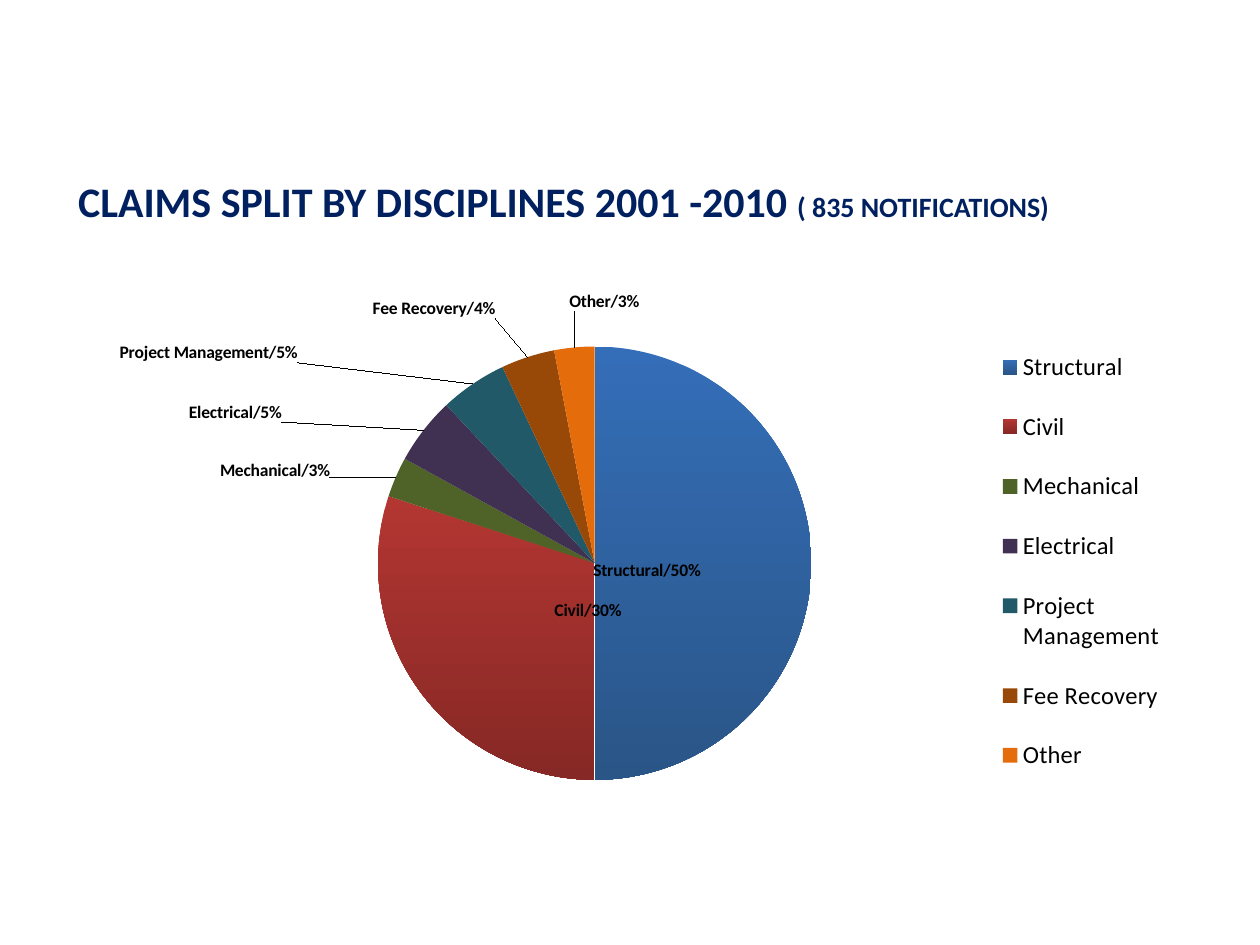
from dataclasses import dataclass
from typing import Any, Optional

import pptx
import pptx.chart.data
import pptx.dml.color
import pptx.enum.chart
import pptx.enum.text
import pptx.oxml
import pptx.oxml.ns
import pptx.util

Inches = pptx.util.Inches


@dataclass(frozen=True)
class Theme:
    font: str = "Calibri"
    title_color: str = "002060"
    text_color: str = "000000"
    title_size: int = 24
    subtitle_size: int = 16
    legend_size: int = 14
    label_size: int = 10


@dataclass(frozen=True)
class Box:
    left: float
    top: float
    width: float
    height: float


@dataclass(frozen=True)
class Discipline:
    name: str
    share: float
    colors: tuple[str, ...]
    label_shift: tuple[float, float]


THEME = Theme()
TITLE_BOX = Box(0.52, 1.33, 9.16, 0.52)
CHART_BOX = Box(0.5, 2.19, 9, 4.51)
PLOT_BOX = Box(0, 0.56, 8.44, 3.44)
LEGEND_BOX = Box(7.33, 0.37, 1.5, 3.79)
DISCIPLINES = (
    Discipline("Structural", 0.5, ("346EB8", "2A5587"), (-1.79, 0.06)),
    Discipline("Civil", 0.3, ("B33632", "862825"), (1.65, -0.75)),
    Discipline("Mechanical", 0.03, ("4F6228",), (-0.47, 0.05)),
    Discipline("Electrical", 0.05, ("403152",), (-1.08, -0.03)),
    Discipline("Project Management", 0.05, ("215968",), (-1.36, -0.12)),
    Discipline("Fee Recovery", 0.04, ("984807",), (-0.24, -0.25)),
    Discipline("Other", 0.03, ("E46C0A",), (0.52, -0.23)),
)


def rgb(color: str) -> pptx.dml.color.RGBColor:
    return pptx.dml.color.RGBColor.from_string(color)


def format_font(font: Any, size: int, color: str, bold: bool = False) -> None:
    font.name = THEME.font
    font.size = pptx.util.Pt(size)
    font.bold = bold
    font.color.rgb = rgb(color)


def add_text(paragraph: Any, text: str, *, size: int, color: str, bold: bool = False) -> None:
    run = paragraph.add_run()
    run.text = text
    format_font(run.font, size, color, bold)


def chart_element(tag: str, content: str = "", attributes: str = "") -> Any:
    namespace = pptx.oxml.ns.nsdecls("c")
    return pptx.oxml.parse_xml(f"<c:{tag} {namespace} {attributes}>{content}</c:{tag}>")


def manual_layout(left: float, top: float, width: Optional[float] = None,
                  height: Optional[float] = None, inner: bool = False) -> Any:
    content = '<c:layoutTarget val="inner"/>' if inner else ""
    if width is not None:
        content += '<c:xMode val="edge"/><c:yMode val="edge"/>'
    lengths = (("x", left, CHART_BOX.width), ("y", top, CHART_BOX.height),
               ("w", width, CHART_BOX.width), ("h", height, CHART_BOX.height))
    for tag, length, full in lengths:
        if length is not None:
            content += f'<c:{tag} val="{length / full:.4f}"/>'
    return chart_element("layout", f"<c:manualLayout>{content}</c:manualLayout>")


def add_title(slide: Any) -> None:
    title = slide.shapes.title
    title.left, title.top = Inches(TITLE_BOX.left), Inches(TITLE_BOX.top)
    title.width, title.height = Inches(TITLE_BOX.width), Inches(TITLE_BOX.height)
    title.text_frame.word_wrap = True
    title.text_frame.vertical_anchor = pptx.enum.text.MSO_ANCHOR.MIDDLE
    paragraph = title.text_frame.paragraphs[0]
    paragraph.alignment = pptx.enum.text.PP_ALIGN.LEFT
    add_text(paragraph, "CLAIMS SPLIT BY DISCIPLINES 2001 -2010 ",
             size=THEME.title_size, color=THEME.title_color, bold=True)
    add_text(paragraph, "( 835 NOTIFICATIONS)",
             size=THEME.subtitle_size, color=THEME.title_color, bold=True)


def fill_slice(fill: Any, colors: tuple[str, ...]) -> None:
    if len(colors) == 1:
        fill.solid()
        fill.fore_color.rgb = rgb(colors[0])
        return
    fill.gradient()
    fill.gradient_angle = 270
    for stop, color in zip(fill.gradient_stops, colors):
        stop.color.rgb = rgb(color)


def format_slice(series: Any, index: int, discipline: Discipline) -> None:
    point = series.points[index]
    fill_slice(point.format.fill, discipline.colors)
    point.format.line.fill.background()
    label = point.data_label
    format_font(label.font, THEME.label_size, THEME.text_color, bold=True)
    label.position = pptx.enum.chart.XL_LABEL_POSITION.BEST_FIT
    element = series._element.xpath(f"c:dLbls/c:dLbl[c:idx/@val='{index}']")[0]
    element.insert(1, manual_layout(*discipline.label_shift))
    element.insert(2, chart_element("numFmt", attributes='formatCode="0%" sourceLinked="0"'))
    element.xpath("c:showCatName")[0].set("val", "1")
    element.append(chart_element("separator", "/"))


def add_pie(slide: Any) -> None:
    data = pptx.chart.data.CategoryChartData(number_format="0%")
    data.categories = [discipline.name for discipline in DISCIPLINES]
    data.add_series("Series 1", [discipline.share for discipline in DISCIPLINES])
    chart = slide.shapes.add_chart(
        pptx.enum.chart.XL_CHART_TYPE.PIE, Inches(CHART_BOX.left), Inches(CHART_BOX.top),
        Inches(CHART_BOX.width), Inches(CHART_BOX.height), data).chart
    chart.has_title = False
    format_font(chart.font, THEME.label_size, THEME.text_color)
    chart.has_legend = True
    chart.legend.position = pptx.enum.chart.XL_LEGEND_POSITION.RIGHT
    chart.legend.include_in_layout = False
    format_font(chart.legend.font, THEME.legend_size, THEME.text_color)
    plot = chart.plots[0]
    plot.vary_by_categories = True
    series = plot.series[0]
    labels = series.data_labels
    labels.show_value = True
    labels.show_category_name = True
    labels.number_format = "0%"
    labels.number_format_is_linked = False
    format_font(labels.font, THEME.label_size, THEME.text_color, bold=True)
    for index, discipline in enumerate(DISCIPLINES):
        format_slice(series, index, discipline)
    place_chart_parts(chart)


def place_chart_parts(chart: Any) -> None:
    plot_area = chart._chartSpace.xpath("c:chart/c:plotArea")[0]
    legend = chart._chartSpace.xpath("c:chart/c:legend")[0]
    for parent, position, box in ((plot_area, 0, PLOT_BOX), (legend, 1, LEGEND_BOX)):
        for layout in parent.xpath("c:layout"):
            parent.remove(layout)
        parent.insert(position, manual_layout(
            box.left, box.top, box.width, box.height, inner=parent is plot_area))


def main() -> None:
    presentation = pptx.Presentation()
    presentation.slide_width, presentation.slide_height = Inches(10), Inches(7.5)
    slide = presentation.slides.add_slide(presentation.slide_layouts[5])
    add_title(slide)
    add_pie(slide)
    presentation.save("out.pptx")


if __name__ == "__main__":
    main()
